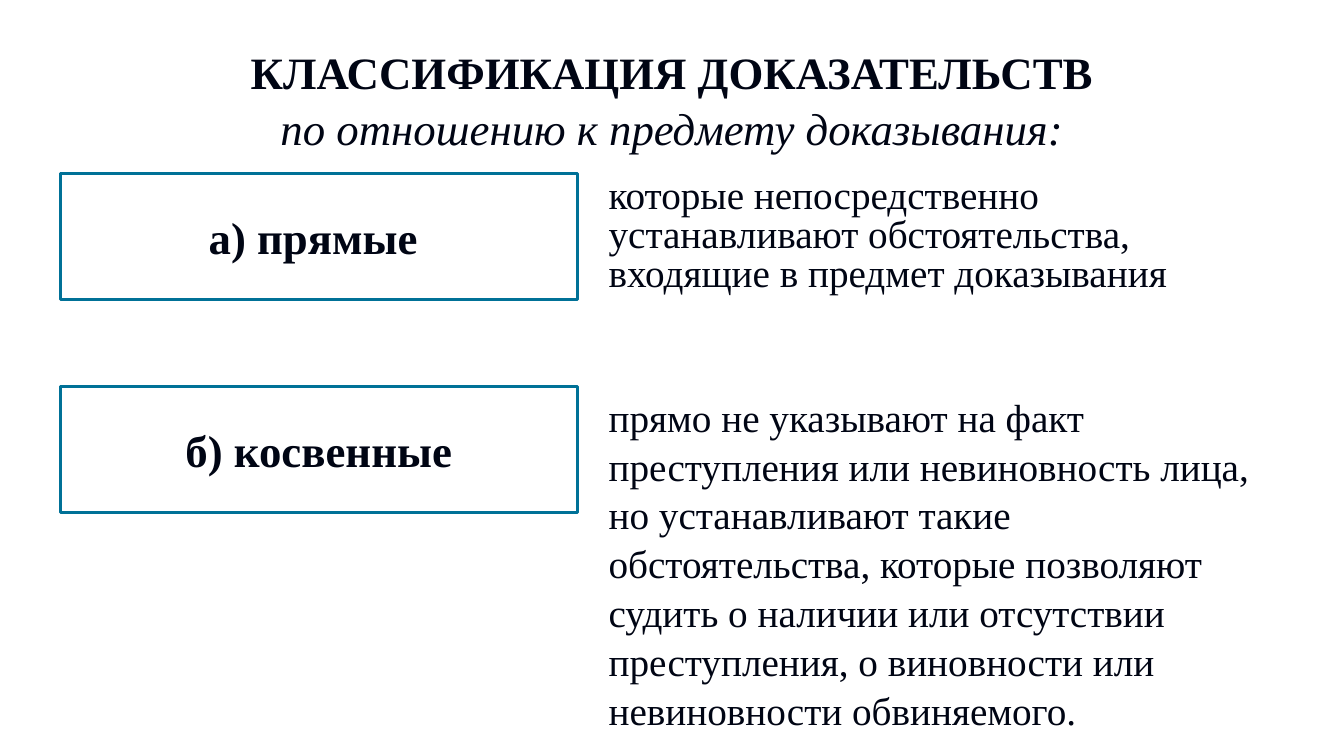
import dataclasses
import typing

import pptx
import pptx.dml.color
import pptx.enum.shapes
import pptx.enum.text
import pptx.util

Cm = pptx.util.Cm
Pt = pptx.util.Pt
Align = pptx.enum.text.PP_ALIGN
Anchor = pptx.enum.text.MSO_ANCHOR

INK = "000514"
EDGE = "007197"
PAPER = "FFFFFF"
FACE = "Times New Roman"
LEFT, WIDE, HIGH = 1.52, 13.03, 3.18
SIDE, SPAN = 15.09, 16.99

HEAD = {"size": Pt(32), "bold": True}
LEAD = {"size": Pt(32), "italic": True}
BODY = {"size": Pt(28)}


@dataclasses.dataclass
class Kind:
    name: str
    text: str
    top: float
    high: float
    pitch: float


KINDS = [
    Kind("а) прямые ",
         "которые непосредственно устанавливают обстоятельства, "
         "входящие в предмет доказывания", 4.37, 3.96, 0.83),
    Kind("б) косвенные",
         "прямо не указывают на факт преступления или невиновность лица, "
         "но устанавливают такие обстоятельства, которые позволяют судить "
         "о наличии или отсутствии преступления, о виновности или "
         "невиновности обвиняемого.", 9.73, 9.32, 1.04),
]


def tint(code: str) -> pptx.dml.color.RGBColor:
    return pptx.dml.color.RGBColor.from_string(code)


def write(shape: typing.Any, lines: list[tuple[str, dict]], align: Align,
          anchor: Anchor, pitch: float = 1.0) -> None:
    frame = shape.text_frame
    frame.word_wrap = True
    frame.vertical_anchor = anchor
    for spot, (text, style) in enumerate(lines):
        para = frame.add_paragraph() if spot else frame.paragraphs[0]
        para.alignment = align
        para.line_spacing = pitch
        run = para.add_run()
        run.text = text
        for key, value in {"name": FACE, **style}.items():
            setattr(run.font, key, value)
        run.font.color.rgb = tint(INK)


def draw(slide: typing.Any, kind: Kind) -> None:
    box = slide.shapes.add_shape(
        pptx.enum.shapes.MSO_SHAPE.RECTANGLE,
        Cm(LEFT), Cm(kind.top), Cm(WIDE), Cm(HIGH))
    box.shadow.inherit = False
    box.fill.solid()
    box.fill.fore_color.rgb = tint(PAPER)
    box.line.color.rgb = tint(EDGE)
    box.line.width = Pt(2)
    write(box, [(kind.name, HEAD)], Align.CENTER, Anchor.MIDDLE)
    note = slide.shapes.add_textbox(
        Cm(SIDE), Cm(kind.top), Cm(SPAN), Cm(kind.high))
    write(note, [(kind.text, BODY)], Align.LEFT, Anchor.TOP, kind.pitch)


def main() -> None:
    deck = pptx.Presentation()
    deck.slide_width = Cm(33.87)
    deck.slide_height = Cm(19.05)
    slide = deck.slides.add_slide(deck.slide_layouts[6])
    title = slide.shapes.add_textbox(Cm(0), Cm(0.95), Cm(33.87), Cm(2.9))
    write(title, [("КЛАССИФИКАЦИЯ ДОКАЗАТЕЛЬСТВ", HEAD),
                  ("по отношению к предмету доказывания:", LEAD)],
          Align.CENTER, Anchor.TOP, 1.04)
    for kind in KINDS:
        draw(slide, kind)
    deck.save("out.pptx")


if __name__ == "__main__":
    main()
